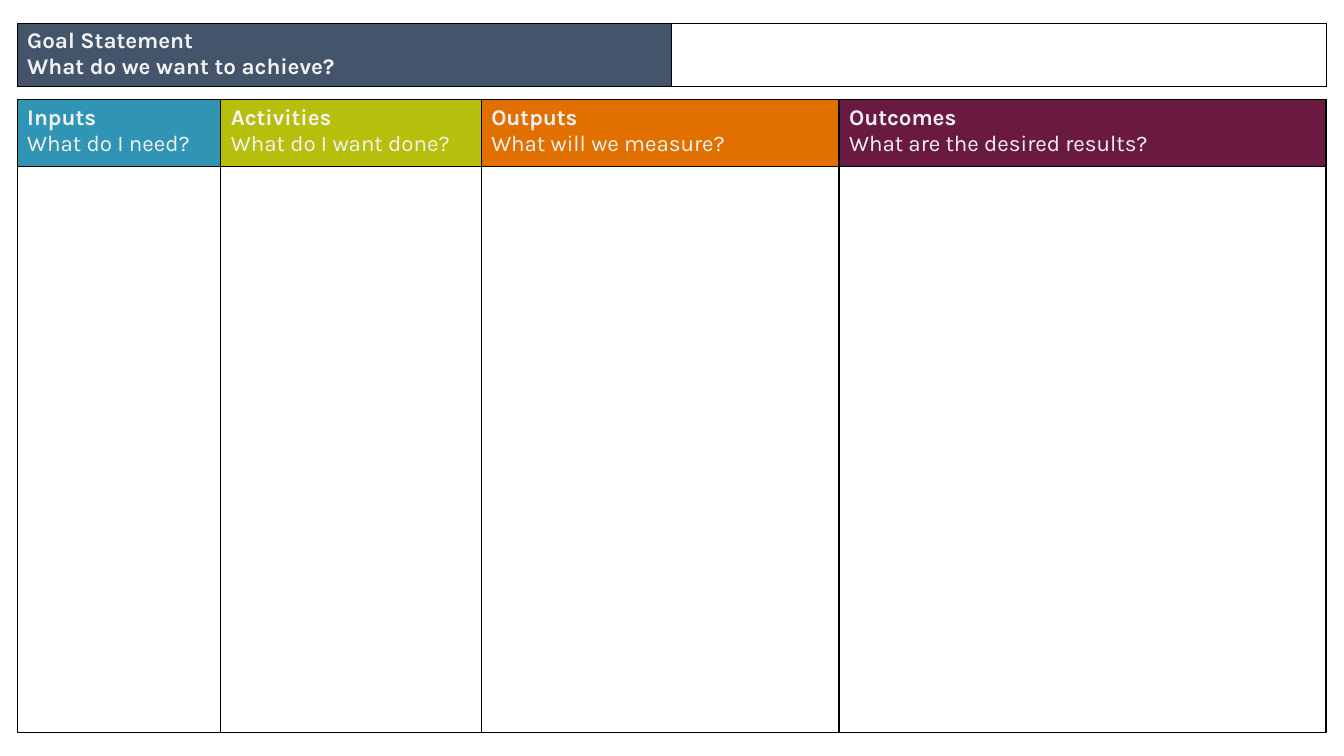
import dataclasses

import lxml.etree
import pptx
import pptx.dml.color
import pptx.oxml.ns
import pptx.presentation
import pptx.slide
import pptx.table
import pptx.text.text
import pptx.util

Pt = pptx.util.Pt
RGBColor = pptx.dml.color.RGBColor
qn = pptx.oxml.ns.qn

FONT = "Karla"
BLACK = RGBColor(0x00, 0x00, 0x00)
OFF_WHITE = RGBColor(0xF2, 0xF2, 0xF2)
SLATE = RGBColor(0x44, 0x54, 0x6A)
BLUE = RGBColor(0x30, 0x95, 0xB4)
GREEN = RGBColor(0xB6, 0xBF, 0x0B)
ORANGE = RGBColor(0xE1, 0x70, 0x00)
PLUM = RGBColor(0x6A, 0x1A, 0x41)

LEFT = 12.24


@dataclasses.dataclass(frozen=True)
class Heading:
    title: str
    question: str
    fill: RGBColor
    bold_question: bool = False


@dataclasses.dataclass(frozen=True)
class Grid:
    top: float
    widths: list[float]
    heights: list[float]
    headings: list[Heading]


GOAL = Grid(
    16.56, [467.5, 467.5], [45.36],
    [Heading("Goal Statement", "What do we want to achieve?", SLATE, True)],
)
LOGIC_MODEL = Grid(
    71.3, [145.5, 186, 255.6, 347.9], [47.5, 404.6],
    [
        Heading("Inputs", "What do I need?", BLUE),
        Heading("Activities", "What do I want done?", GREEN),
        Heading("Outputs", "What will we measure?", ORANGE),
        Heading("Outcomes", "What are the desired results?", PLUM),
    ],
)


def add_text(p: pptx.text.text._Paragraph, text: str, *, bold: bool = False,
             size: float = 16, color: RGBColor = OFF_WHITE) -> None:
    r = p.add_run()
    r.text = text
    r.font.name = FONT
    r.font.size = Pt(size)
    r.font.bold = bold
    r.font.color.rgb = color


def set_borders(cell: pptx.table._Cell, color: RGBColor = BLACK, width: float = 1) -> None:
    props = cell._tc.get_or_add_tcPr()
    for i, side in enumerate(("a:lnL", "a:lnR", "a:lnT", "a:lnB")):
        line = lxml.etree.Element(qn(side), w=str(Pt(width)))
        fill = lxml.etree.SubElement(line, qn("a:solidFill"))
        lxml.etree.SubElement(fill, qn("a:srgbClr"), val=str(color))
        props.insert(i, line)  # borders must precede the fill


def add_grid(s: pptx.slide.Slide, grid: Grid) -> None:
    sp = s.shapes.add_table(
        len(grid.heights), len(grid.widths), Pt(LEFT), Pt(grid.top),
        Pt(sum(grid.widths)), Pt(sum(grid.heights)))
    table = sp.table
    table.first_row = table.horz_banding = False
    for column, width in zip(table.columns, grid.widths):
        column.width = Pt(width)
    for row, height in zip(table.rows, grid.heights):
        row.height = Pt(height)
    for cell in table.iter_cells():
        cell.fill.background()
        set_borders(cell)

    # Heading cells
    for cell, heading in zip(table.rows[0].cells, grid.headings):
        cell.fill.solid()
        cell.fill.fore_color.rgb = heading.fill
        tf = cell.text_frame
        add_text(tf.paragraphs[0], heading.title, bold=True)
        add_text(tf.add_paragraph(), heading.question, bold=heading.bold_question)


def main() -> None:
    prs = pptx.Presentation()
    prs.slide_width, prs.slide_height = Pt(960), Pt(540)
    s = prs.slides.add_slide(prs.slide_layouts[6])
    for grid in (LOGIC_MODEL, GOAL):
        add_grid(s, grid)
    prs.save("out.pptx")


if __name__ == "__main__":
    main()
